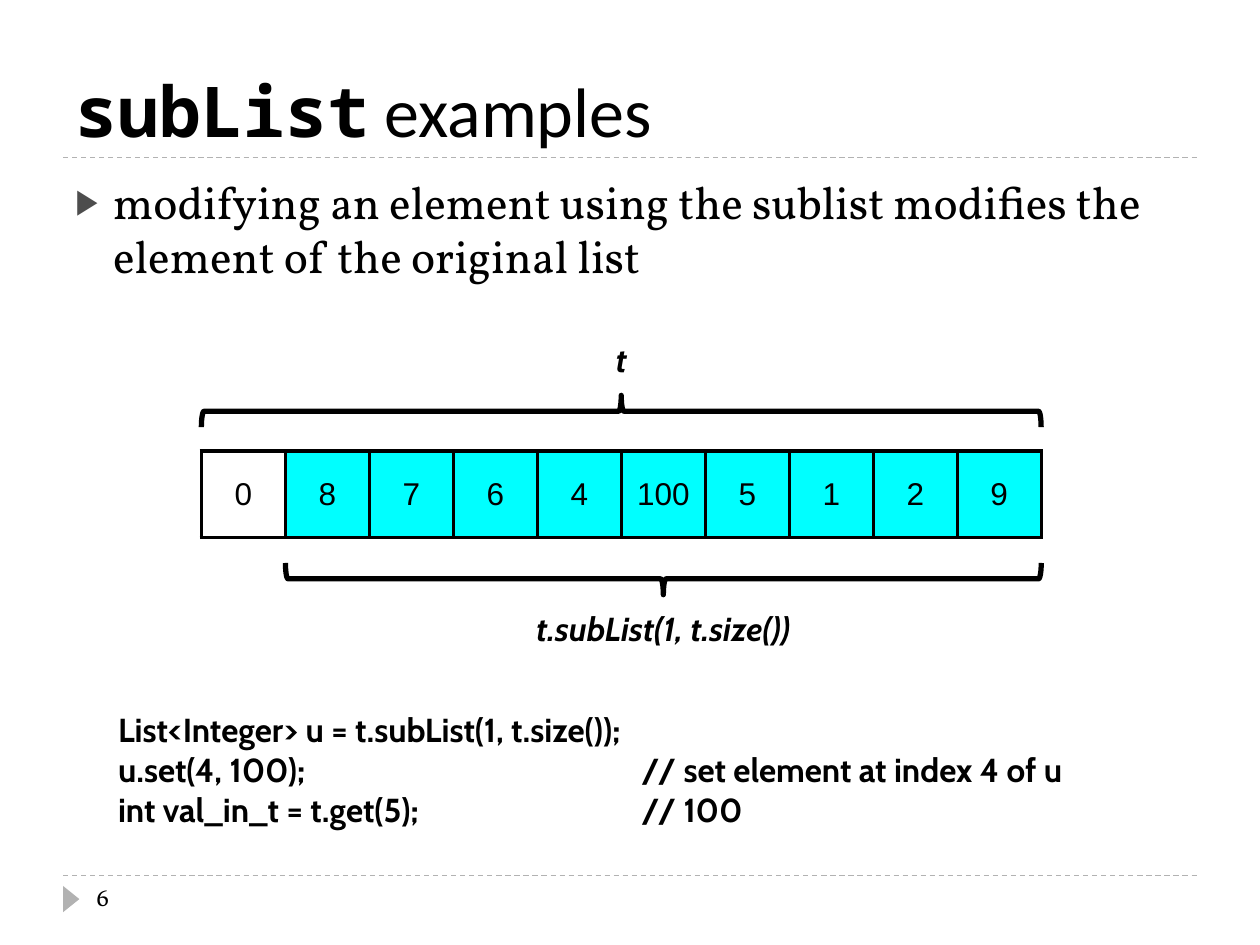
from lxml.etree import SubElement
from pptx import Presentation
from pptx.dml.color import RGBColor
from pptx.enum.dml import MSO_LINE_DASH_STYLE as Dash
from pptx.enum.shapes import MSO_CONNECTOR as Connector, MSO_SHAPE as Shape
from pptx.enum.text import MSO_ANCHOR as Anchor, PP_ALIGN as Align
from pptx.oxml.ns import qn
from pptx.util import Cm, Pt

BLACK = RGBColor(0x00, 0x00, 0x00)
WHITE = RGBColor(0xFF, 0xFF, 0xFF)
CYAN = RGBColor(0x00, 0xFF, 0xFF)
GREY = RGBColor(0xB2, 0xB2, 0xB2)

TITLE = [("subList", "Noto Sans Mono", True), (" examples", "Calibri", False)]
STATEMENT = "modifying an element using the sublist modifies the element of the original list"
VALUES = [0, 8, 7, 6, 4, 100, 5, 1, 2, 9]
SUBLIST_START = 1
CODE = [
    "List<Integer> u = t.subList(1, t.size());",
    "u.set(4, 100);\t// set element at index 4 of u",
    "int val_in_t = t.get(5);\t// 100",
]
PAGE_NUMBER = "6"
BRACES = [
    ("t", 0, 8.29, 270, 6.71),
    ("t.subList(1, t.size())", SUBLIST_START, 11.67, 90, 12.14),
]
RULES = [3.18, 17.65]

MARGIN, CONTENT_WIDTH = 1.27, 22.86
ROW_LEFT, ROW_TOP, ROW_WIDTH, ROW_HEIGHT = 4.06, 9.09, 16.93, 1.75
CELL_WIDTH = ROW_WIDTH / len(VALUES)
BRACE_DEPTH = 0.64
LABEL_WIDTH, LABEL_HEIGHT = 6.6, 1.07
COMMENT_TAB = 10.55

presentation = Presentation()
presentation.slide_width, presentation.slide_height = Cm(25.4), Cm(19.05)
slide = presentation.slides.add_slide(presentation.slide_layouts[6])
shapes = slide.shapes


def style(font, size, name, bold=False, italic=False):
    font.size, font.name = Pt(size), name
    font.bold, font.italic = bold, italic
    font.color.rgb = BLACK


def add_text(lines, left, top, width, height, *, size, font, bold=False,
             italic=False, align=Align.LEFT, anchor=Anchor.TOP):
    box = shapes.add_textbox(Cm(left), Cm(top), Cm(width), Cm(height))
    frame = box.text_frame
    frame.word_wrap = True
    frame.vertical_anchor = anchor
    for index, line in enumerate(lines):
        paragraph = frame.paragraphs[0] if index == 0 else frame.add_paragraph()
        paragraph.alignment = align
        runs = [(line, font, bold)] if isinstance(line, str) else line
        for words, run_font, run_bold in runs:
            run = paragraph.add_run()
            run.text = words
            style(run.font, size, run_font, run_bold, italic)
    return frame


def add_bullet(paragraph):
    properties = paragraph._p.get_or_add_pPr()
    properties.set("marL", str(Cm(0.76)))
    properties.set("indent", str(-Cm(0.76)))
    color = SubElement(properties, qn("a:buClr"))
    SubElement(color, qn("a:srgbClr"), val="4D4D4D")
    SubElement(properties, qn("a:buSzPct"), val="76000")
    SubElement(properties, qn("a:buFont"), typeface="Arial")
    SubElement(properties, qn("a:buChar"), char="▶")


def add_tab(paragraph, position):
    tabs = SubElement(paragraph._p.get_or_add_pPr(), qn("a:tabLst"))
    SubElement(tabs, qn("a:tab"), pos=str(Cm(position)), algn="l")


def add_borders(cell, width):
    properties = cell._tc.get_or_add_tcPr()
    for side in ("lnL", "lnR", "lnT", "lnB"):
        border = SubElement(properties, qn(f"a:{side}"), w=str(Pt(width)))
        fill = SubElement(border, qn("a:solidFill"))
        SubElement(fill, qn("a:srgbClr"), val=str(BLACK))


for y in RULES:
    rule = shapes.add_connector(
        Connector.STRAIGHT, Cm(MARGIN), Cm(y), Cm(MARGIN + CONTENT_WIDTH), Cm(y))
    rule.line.color.rgb = GREY
    rule.line.width = Pt(0.75)
    rule.line.dash_style = Dash.DASH
    SubElement(rule._element.spPr, qn("a:effectLst"))

page_marker = shapes.add_shape(
    Shape.ISOSCELES_TRIANGLE, Cm(1.17), Cm(17.96), Cm(0.53), Cm(0.33))
page_marker.rotation = 90
page_marker.shadow.inherit = False
page_marker.fill.solid()
page_marker.fill.fore_color.rgb = GREY
page_marker.line.fill.background()

add_text([TITLE], MARGIN, 0.43, CONTENT_WIDTH, 2.74,
         size=40, font="Calibri", anchor=Anchor.BOTTOM)
statement = add_text([STATEMENT], MARGIN, 3.38, CONTENT_WIDTH, 13.72,
                     size=26, font="Vollkorn")
add_bullet(statement.paragraphs[0])
add_text([PAGE_NUMBER], 1.7, 17.65, 5.51, 1.02, size=14, font="Vollkorn")

row = shapes.add_table(1, len(VALUES), Cm(ROW_LEFT), Cm(ROW_TOP),
                       Cm(ROW_WIDTH), Cm(ROW_HEIGHT)).table
row.first_row = row.horz_banding = False
for index, value in enumerate(VALUES):
    row.columns[index].width = Cm(CELL_WIDTH)
    cell = row.cell(0, index)
    add_borders(cell, 2.25)
    cell.fill.solid()
    cell.fill.fore_color.rgb = CYAN if index >= SUBLIST_START else WHITE
    cell.margin_left = cell.margin_right = Cm(0.1)
    cell.vertical_anchor = Anchor.MIDDLE
    paragraph = cell.text_frame.paragraphs[0]
    paragraph.alignment = Align.CENTER
    run = paragraph.add_run()
    run.text = str(value)
    style(run.font, 18, "Arial")

for label, start, center_y, rotation, label_top in BRACES:
    span = (len(VALUES) - start) * CELL_WIDTH
    center_x = ROW_LEFT + ROW_WIDTH - span / 2
    brace = shapes.add_shape(
        Shape.RIGHT_BRACE, Cm(center_x - BRACE_DEPTH / 2), Cm(center_y - span / 2),
        Cm(BRACE_DEPTH), Cm(span))
    brace.rotation = rotation
    brace.shadow.inherit = False
    brace.fill.background()
    brace.line.color.rgb = BLACK
    brace.line.width = Pt(3)
    add_text([label], center_x - LABEL_WIDTH / 2, label_top, LABEL_WIDTH, LABEL_HEIGHT,
             size=19, font="Cabin", bold=True, italic=True, align=Align.CENTER)

code = add_text(CODE, 2.13, 14.17, 22.3, 2.69, size=19, font="Cabin", bold=True)
for paragraph in code.paragraphs:
    add_tab(paragraph, COMMENT_TAB)

presentation.save("out.pptx")
